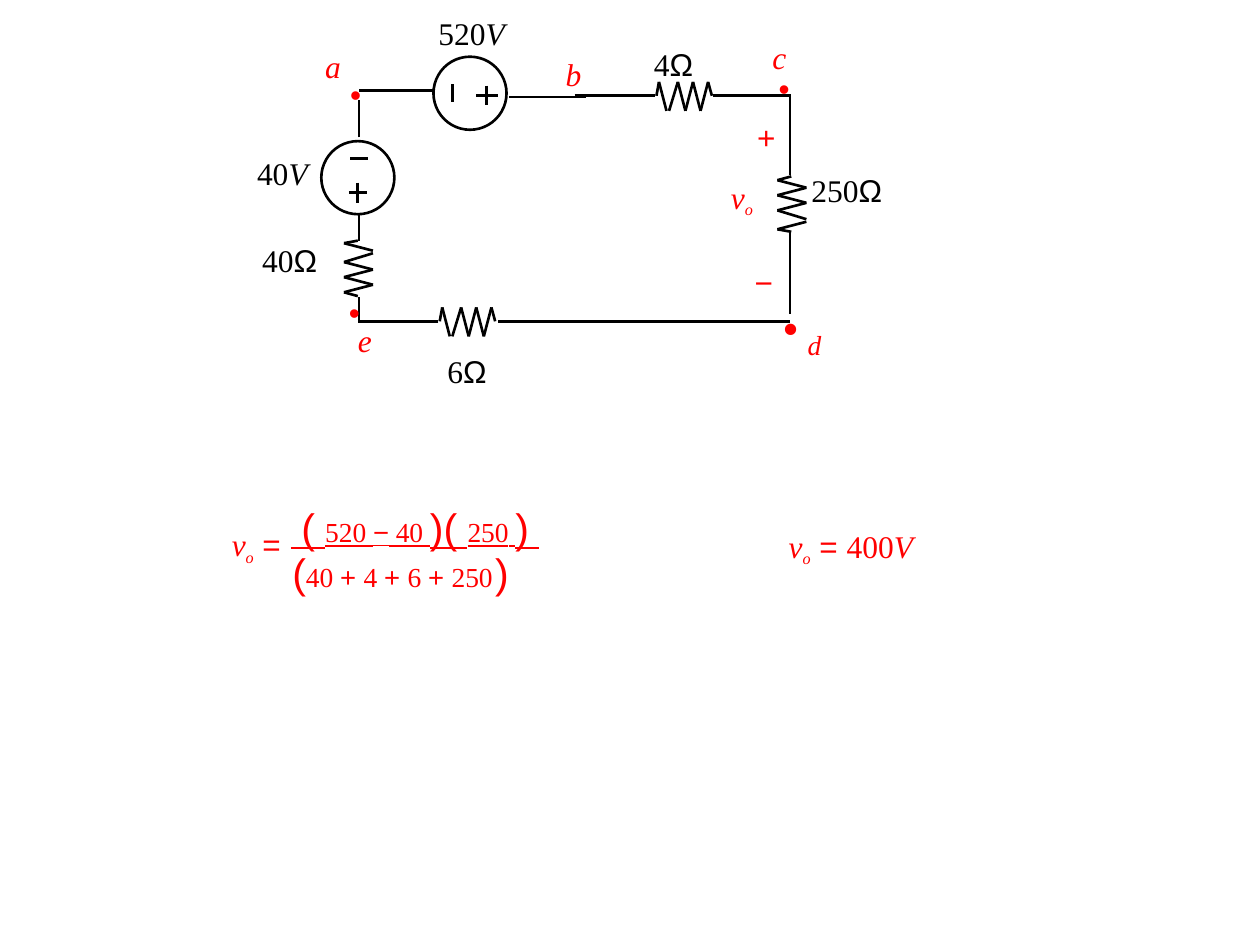
import pptx
import pptx.util
import pptx.dml.color
import pptx.enum.shapes
import lxml.etree
from collections import namedtuple

Inches, Pt = pptx.util.Inches, pptx.util.Pt
BLACK, RED = "000000", "FF0000"
SERIF, SANS = "Times New Roman", "Arial"
Run = namedtuple("Run", "text name size italic gap base underline",
                 defaults=(SERIF, 18, False, 0, 0, False))
Para = namedtuple("Para", "runs indent line before", defaults=(0.01, None, 0))


def paint(color, code):
    """Set a colour from a hex string."""
    color.rgb = pptx.dml.color.RGBColor.from_string(code)


def add(parent, tag, **attrs):
    """Append a drawing element and return it."""
    space = "{http://schemas.openxmlformats.org/drawingml/2006/main}"
    return lxml.etree.SubElement(parent, space + tag, attrs)


def ink(shape):
    """Give a shape the circuit's black stroke."""
    paint(shape.line.color, BLACK)
    shape.line.width = Pt(1.5)


def wire(slide, x1, y1, x2, y2):
    """Draw a straight stroke."""
    kind = pptx.enum.shapes.MSO_CONNECTOR.STRAIGHT
    line = slide.shapes.add_connector(kind, *map(Inches, (x1, y1, x2, y2)))
    ink(line)
    add(line._element.spPr, "effectLst")


def ring(slide, x, y, size=0.58):
    """Draw the circle of a voltage source."""
    kind = pptx.enum.shapes.MSO_SHAPE.OVAL
    shape = slide.shapes.add_shape(kind, *map(Inches, (x, y, size, size)))
    shape.shadow.inherit = False
    shape.fill.background()
    ink(shape)


def zigzag(slide, x, y, upright=False, flip=False):
    """Draw a resistor, with a small break after its first peak."""
    length, width = 0.44, 0.23
    steps = [0, 0.02, 0.08, 0.1, 0.17, 0.23, 0.29, 0.35, 0.41, length]
    sides = [0.11, 0, width, width, 0, width, 0, width, 0, 0.11]
    points = []
    for along, across in zip(steps, sides):
        along = length - along if flip else along
        dx, dy = (across, along) if upright else (along, across)
        points.append((x + dx, y + dy))
    for part in (points[:3], points[3:]):
        for start, end in zip(part, part[1:]):
            wire(slide, *start, *end)


def write(slide, x, y, w, h, paras, code):
    """Place a text box and return its paragraphs."""
    frame = slide.shapes.add_textbox(*map(Inches, (x, y, w, h))).text_frame
    frame.word_wrap = True
    frame.margin_left = frame.margin_right = 0
    frame.margin_top = frame.margin_bottom = 0
    for i, item in enumerate(paras):
        para = frame.add_paragraph() if i else frame.paragraphs[0]
        para._p.get_or_add_pPr().set("marL", str(Inches(item.indent)))
        if item.line:
            para.line_spacing = Pt(item.line)
        if item.before:
            para.space_before = Pt(item.before)
        paint(para.font.color, code)
        runs = [para.add_run() for _ in item.runs]
        for key in ("name", "size", "italic", "underline"):
            values = [getattr(part, key) for part in item.runs]
            fonts = [run.font for run in runs]
            if len(set(values)) == 1:
                fonts = [para.font]
            for font, value in zip(fonts, values):
                setattr(font, key, Pt(value) if key == "size" else value)
        for run, part in zip(runs, item.runs):
            run.text = part.text
            props = run._r.get_or_add_rPr()
            if part.gap:
                props.set("spc", str(round(part.gap * 100)))
            if part.base:
                props.set("baseline", str(part.base * 1000))
    return frame.paragraphs


def vout():
    """Return the runs of the output voltage's symbol."""
    return [Run("v", italic=True, gap=-0.1),
            Run("o", size=15.8, italic=True, base=-24)]


def circuit(slide, x, y):
    """Draw the loop from the box's left and top."""
    for left, top in ((1.44, 0.45), (0.55, 1.12)):
        ring(slide, x + left, y + top)
    strokes = [
        (1.86, 0.68, 1.86, 0.83), (1.78, 0.76, 1.95, 0.76),
        (1.59, 0.67, 1.59, 0.81), (0.77, 1.53, 0.91, 1.53),
        (0.84, 1.45, 0.84, 1.61), (0.78, 1.26, 0.92, 1.26),
        (0.85, 0.72, 1.44, 0.72), (2.04, 0.77, 2.65, 0.77),
        (2.56, 0.76, 3.2, 0.76), (3.66, 0.76, 4.28, 0.76),
        (4.27, 0.77, 4.27, 1.39), (4.27, 1.85, 4.27, 2.49),
        (4.27, 2.55, 2.51, 2.55), (2.57, 2.55, 1.95, 2.55),
        (1.48, 2.55, 0.84, 2.55), (0.85, 2.56, 0.85, 2.36),
        (0.85, 1.91, 0.85, 1.71), (0.85, 1.09, 0.85, 0.79),
    ]
    for x1, y1, x2, y2 in strokes:
        wire(slide, x + x1, y + y1, x + x2, y + y2)
    zigzag(slide, x + 1.49, y + 2.44)
    zigzag(slide, x + 3.21, y + 0.65)
    zigzag(slide, x + 4.17, y + 1.4, upright=True, flip=True)
    zigzag(slide, x + 0.73, y + 1.91, upright=True)
    values = [
        (1.54, 2.79, "6", "Ω"), (3.18, 0.36, "4", "Ω"),
        (4.43, 1.36, "250", "Ω"), (0.07, 1.91, "40", "Ω"),
        (0.03, 1.22, "40", "V"), (1.47, 0.11, "520", "V"),
    ]
    for left, top, count, unit in values:
        mark = Run(unit, SANS) if unit == "Ω" else Run(unit, italic=True)
        write(slide, x + left, y + top, 0.65, 0.33,
              [Para([Run(count), mark])], BLACK)
    nodes(slide, x, y)


def nodes(slide, x, y):
    """Mark the nodes and the output from the box's left and top."""
    dot = Run("•", SANS)
    a, b, c, e = [Run(name, italic=True) for name in "abce"]
    marks = [
        (4, 0.31, 0.31, 0.95, [Para([c], 0.13, 21.3), Para([dot], 0.18, 17.3),
                               Para([Run("+", SANS)], before=6.6)]),
        (0.57, 0.4, 0.34, 0.51, [Para([a], 0.01, 19.8),
                                 Para([dot], 0.21, 15.8)]),
        (0.76, 2.34, 0.21, 0.53, [Para([dot], 0.01, 20.6),
                                  Para([e], 0.08, 16.1)]),
        (2.48, 0.44, 0.32, 0.46, [Para([b])]),
        (3.98, 2.09, 0.17, 0.32, [Para([Run("−", SANS)])]),
        (3.79, 1.41, 0.21, 0.36, [Para(vout())]),
    ]
    for left, top, w, h, paras in marks:
        write(slide, x + left, y + top, w, h, paras, RED)
    end = Para([Run("d", size=27, italic=True, base=-23)], 0.22)
    para = write(slide, x + 4.19, y + 2.36, 0.36, 0.43, [end], RED)[0]
    props = para._p.get_or_add_pPr()
    props.set("indent", str(Inches(-0.2)))
    bullet = add(props, "buClr")
    add(bullet, "srgbClr", val=RED)
    add(props, "buFont", typeface=SERIF)
    add(props, "buChar", char="•")
    props.append(props.find("{*}defRPr"))


def formula(slide, x, y):
    """Write the division and its result from the box's left and top."""
    def big(text, name=SANS, gap=-1.9, line=True):
        return Run(text, name, 23.5, gap=gap, underline=line)

    def term(text, name=SERIF, gap=0, line=True):
        return Run(text, name, 27, gap=gap, base=2, underline=line)

    above = [
        big(" ", SERIF, -0.6), big("("), big(" ", SERIF, -5), term("520"),
        term(" ", gap=-1.9), term("−", SANS), term(" ", gap=-1), term("40"),
        term(" ", gap=-5.2), big(")", gap=-1.1), big("("), big(" ", SERIF, -5),
        term("250"), term(" ", gap=-5.2), big(")"), big(" ", SERIF, -0.6),
    ]
    below = [big("(", gap=-0.5, line=False)]
    for number in ("40 ", "4 ", "6 "):
        below += [term(number, line=False), term("+ ", SANS, line=False)]
    below += [term("25", line=False), term("0", gap=1.5, line=False),
              big(")", line=False)]
    equals = Run(" = ", SANS)
    write(slide, x, y + 0.23, 0.46, 0.36, [Para(vout() + [equals])], RED)
    write(slide, x + 0.47, y, 2.7, 0.77,
          [Para(above), Para(below, 0.02, 25.6)], RED)
    answer = vout() + [equals, Run("400"), Run("V", italic=True)]
    write(slide, x + 4.42, y + 0.24, 1.02, 0.36, [Para(answer)], RED)


def main():
    """Build and save the slide."""
    deck = pptx.Presentation()
    deck.slide_width, deck.slide_height = Inches(10), Inches(7.5)
    slide = deck.slides.add_slide(deck.slide_layouts[6])
    circuit(slide, 2, 0)
    formula(slide, 1.83, 3.94)
    deck.save("out.pptx")


if __name__ == "__main__":
    main()
